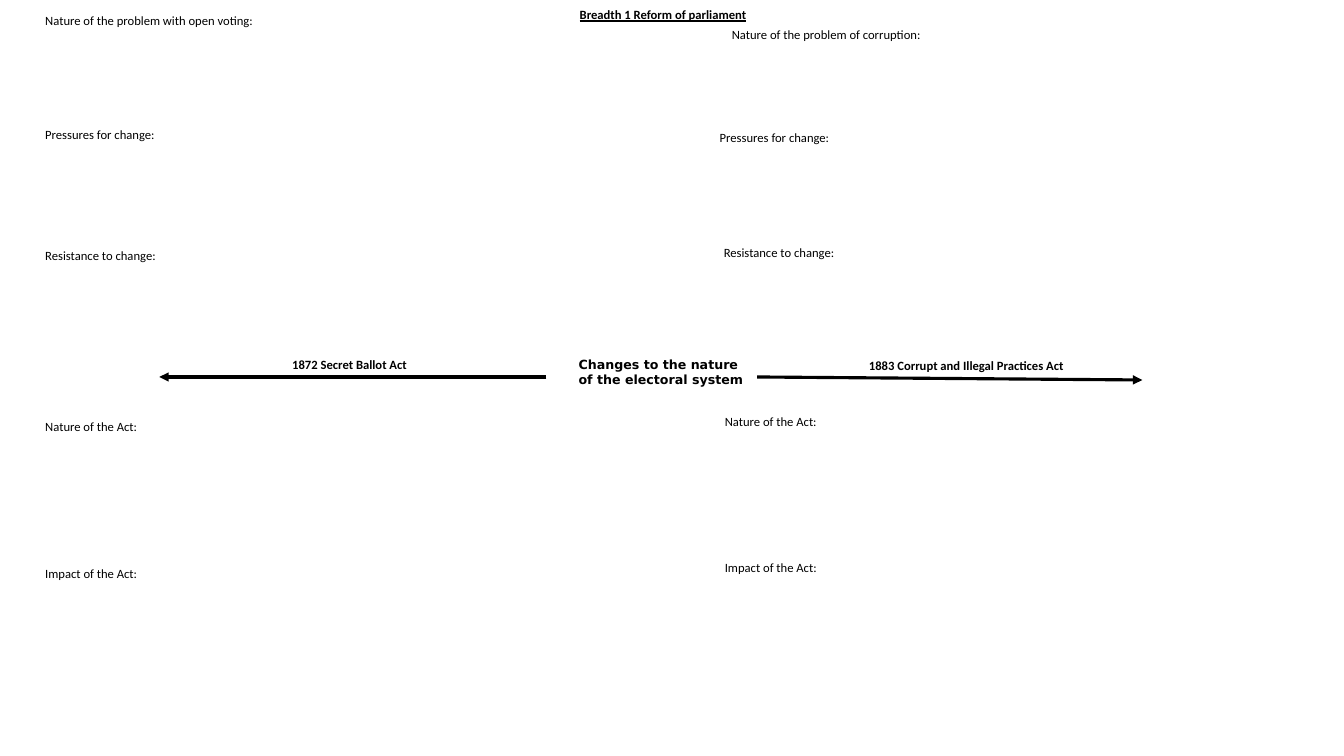
import pptx
import pptx.dml.color
import pptx.enum.shapes
import pptx.enum.text
import pptx.oxml
import pptx.oxml.ns
import pptx.util
from pptx.util import Inches

TITLE_ONLY = 5
LINE_HEIGHT = 0.25


def colour(value):
    return pptx.dml.color.RGBColor.from_string(value)


def write(frame, text, font="Calibri", size=9, ink="000000", bold=False,
          underline=False, wrap=False):
    frame.word_wrap = wrap
    frame.auto_size = pptx.enum.text.MSO_AUTO_SIZE.SHAPE_TO_FIT_TEXT
    frame.vertical_anchor = pptx.enum.text.MSO_ANCHOR.TOP
    para = frame.paragraphs[0]
    para.alignment = pptx.enum.text.PP_ALIGN.LEFT
    para.line_spacing = 1.0
    para.space_before = pptx.util.Pt(0)
    span = para.add_run()
    span.text = text
    span.font.name = font
    span.font.size = pptx.util.Pt(size)
    span.font.bold = bold
    span.font.underline = underline
    span.font.color.rgb = colour(ink)


class Worksheet:
    ink = "000000"
    line_width = 2.25

    def __init__(self, page):
        self.page = page

    def title(self, text, left, top, width):
        box = self.page.shapes.title
        box.left, box.top = Inches(left), Inches(top)
        box.width, box.height = Inches(width), Inches(LINE_HEIGHT)
        write(box.text_frame, text, ink=self.ink, bold=True, underline=True)

    def label(self, text, left, top, width, height=LINE_HEIGHT, **style):
        box = self.page.shapes.add_textbox(
            Inches(left), Inches(top), Inches(width), Inches(height))
        write(box.text_frame, text, ink=self.ink, **style)

    def arrow(self, start, end):
        line = self.page.shapes.add_connector(
            pptx.enum.shapes.MSO_CONNECTOR.STRAIGHT,
            *(Inches(length) for length in start + end))
        line.line.color.rgb = colour(self.ink)
        line.line.width = pptx.util.Pt(self.line_width)
        head = pptx.oxml.parse_xml(
            f'<a:tailEnd {pptx.oxml.ns.nsdecls("a")} type="triangle"/>')
        line.line._get_or_add_ln().append(head)
        line._element.spPr.append(pptx.oxml.parse_xml(
            f'<a:effectLst {pptx.oxml.ns.nsdecls("a")}/>'))


def main():
    deck = pptx.Presentation()
    deck.slide_width, deck.slide_height = Inches(13.33), Inches(7.5)
    page = deck.slides.add_slide(deck.slide_layouts[TITLE_ONLY])
    sheet = Worksheet(page)

    sheet.title("Breadth 1 Reform of parliament", 5.65, 0.02, 1.88)
    sheet.label("Changes to the nature of the electoral system",
                5.64, 3.49, 1.87, 0.4, font="DejaVu Sans", bold=True, wrap=True)

    sheet.arrow((5.42, 3.74), (1.58, 3.74))
    sheet.label("1872 Secret Ballot Act", 2.8, 3.49, 1.35, bold=True)
    sheet.arrow((7.51, 3.74), (11.33, 3.77))
    sheet.label("1883 Corrupt and Illegal Practices Act",
                8.52, 3.5, 2.55, bold=True, wrap=True)

    sheet.label("Nature of the problem with open voting:", 0.35, 0.08, 2.29)
    sheet.label("Nature of the problem of corruption:", 7.16, 0.22, 2.1)

    shared_prompts = [
        ("Pressures for change:", 1.3, (0.35, 1.21), (7.04, 1.24)),
        ("Resistance to change:", 1.31, (0.35, 2.41), (7.08, 2.38)),
        ("Nature of the Act:", 1.12, (0.35, 4.11), (7.09, 4.06)),
        ("Impact of the Act:", 1.12, (0.35, 5.56), (7.09, 5.51)),
    ]
    for text, width, *places in shared_prompts:
        for left, top in places:
            sheet.label(text, left, top, width)

    deck.save("out.pptx")


if __name__ == "__main__":
    main()
